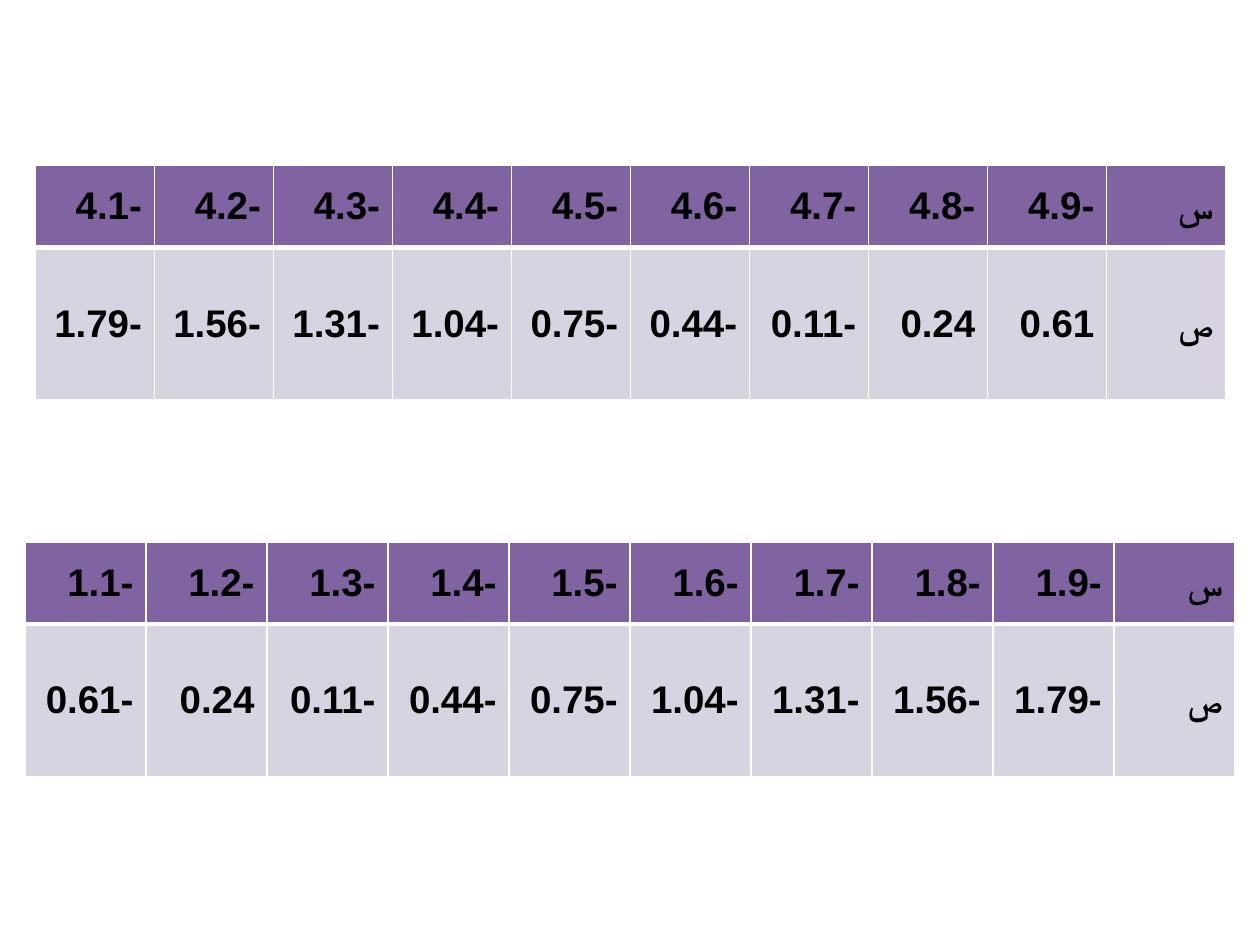
from lxml import etree
from pptx import Presentation
from pptx.dml.color import RGBColor
from pptx.enum.text import MSO_ANCHOR, PP_ALIGN
from pptx.oxml.ns import qn
from pptx.util import Cm, Pt

MIDDLE = MSO_ANCHOR.MIDDLE
RIGHT = PP_ALIGN.RIGHT


def colour(value):
    return RGBColor.from_string(value)


class ValuePage:
    """Style and current slide for tables of x and y values."""

    font_format = {"name": "Arial", "size": Pt(22), "bold": True}
    text_colour = "000000"
    line_colour = "FFFFFF"
    row_fills = ("8064A2", "D8D3E0")
    row_heights = (1.65, 3.07)
    cell_format = {
        "vertical_anchor": MIDDLE,
        "margin_left": Cm(0.25), "margin_right": Cm(0.25),
        "margin_top": Cm(0.15), "margin_bottom": Cm(0.15),
    }
    # Border widths in points; the rule under the header is heavier
    row_borders = (
        {"lnL": 1, "lnR": 1, "lnT": 1, "lnB": 3},
        {"lnL": 1, "lnR": 1, "lnT": 3, "lnB": 1},
    )

    def __init__(self, deck):
        self.page = deck.slides.add_slide(deck.slide_layouts[6])

    def table(self, left, top, column_width, rows):
        columns = len(rows[0])
        frame = self.page.shapes.add_table(
            len(rows), columns, Cm(left), Cm(top),
            Cm(column_width * columns), Cm(sum(self.row_heights)))
        grid = frame.table
        for column in grid.columns:
            column.width = Cm(column_width)
        for row, height in zip(grid.rows, self.row_heights):
            row.height = Cm(height)
        for row, texts, fill, borders in zip(
                grid.rows, rows, self.row_fills, self.row_borders):
            for cell, text in zip(row.cells, texts):
                self.cell(cell, text, fill, borders)

    def cell(self, cell, text, fill, borders):
        for name, value in self.cell_format.items():
            setattr(cell, name, value)
        self.borders(cell, borders)
        cell.fill.solid()
        cell.fill.fore_color.rgb = colour(fill)
        self.text(cell.text_frame.paragraphs[0], text)

    def borders(self, cell, widths):
        properties = cell._tc.get_or_add_tcPr()
        for side, width in widths.items():
            line = etree.SubElement(properties, qn(f"a:{side}"), w=str(Pt(width)))
            solid = etree.SubElement(line, qn("a:solidFill"))
            etree.SubElement(solid, qn("a:srgbClr"), val=self.line_colour)

    def text(self, para, text):
        # Right-to-left order puts the minus sign after the number
        para.alignment = RIGHT
        para._p.get_or_add_pPr().set("rtl", "1")
        span = para.add_run()
        span.text = text
        for name, value in self.font_format.items():
            setattr(span.font, name, value)
        span.font.color.rgb = colour(self.text_colour)
        # Arabic letters take the complex-script font
        etree.SubElement(span._r.get_or_add_rPr(), qn("a:cs"),
                         typeface=self.font_format["name"])


def main():
    deck = Presentation()
    deck.slide_width, deck.slide_height = Cm(25.4), Cm(19.05)
    values = ValuePage(deck)

    # Values from -4.1 to -4.9
    values.table(0.71, 3.34, 2.4, [
        [f"-4.{tenth}" for tenth in range(1, 10)] + ["س"],
        ["-1.79", "-1.56", "-1.31", "-1.04", "-0.75",
         "-0.44", "-0.11", "0.24", "0.61", "ص"],
    ])

    # Values from -1.1 to -1.9
    values.table(0.5, 10.93, 2.44, [
        [f"-1.{tenth}" for tenth in range(1, 10)] + ["س"],
        ["-0.61", "0.24", "-0.11", "-0.44", "-0.75",
         "-1.04", "-1.31", "-1.56", "-1.79", "ص"],
    ])

    deck.save("out.pptx")


if __name__ == "__main__":
    main()
